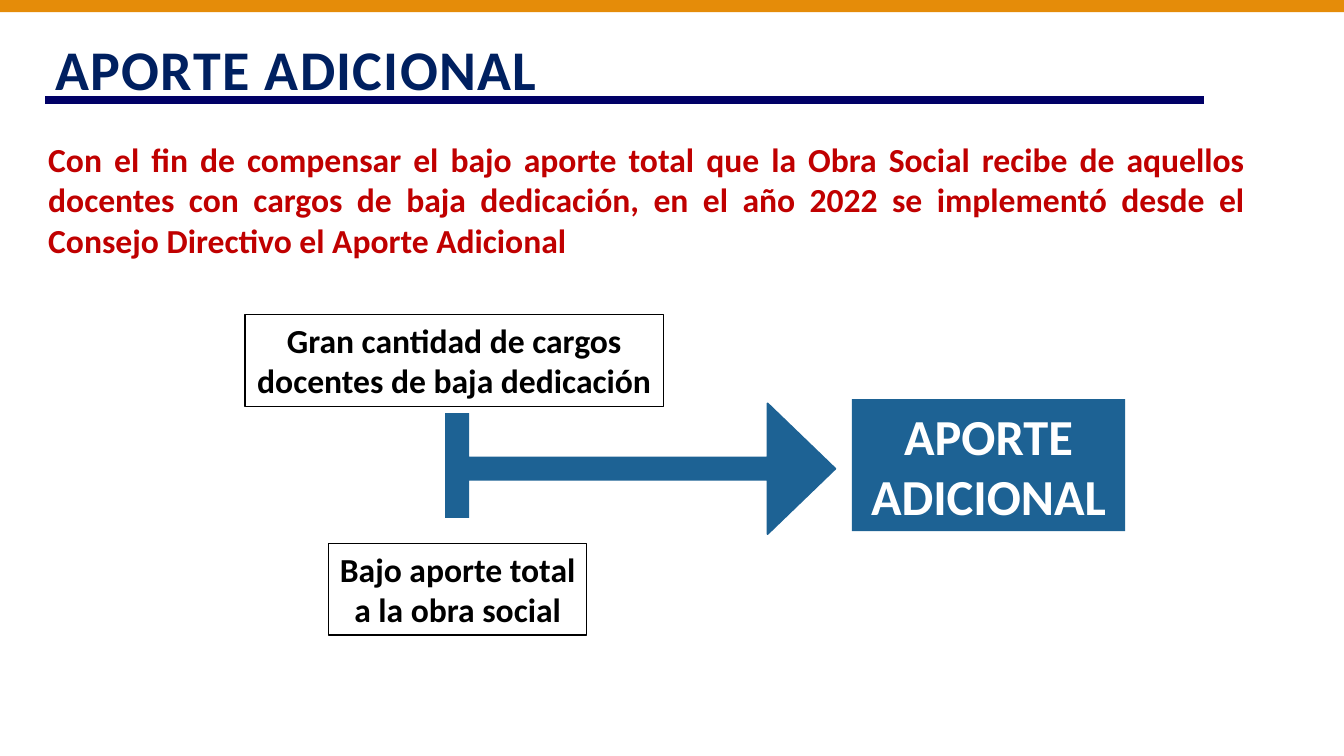
"""Build the slide that explains the additional contribution."""
from pptx import Presentation
from pptx.dml.color import RGBColor
from pptx.enum.shapes import MSO_CONNECTOR, MSO_SHAPE
from pptx.enum.text import MSO_ANCHOR, PP_ALIGN
from pptx.oxml.ns import qn
from pptx.util import Inches, Pt
from lxml.etree import SubElement

FONT = "Calibri"
ORANGE, NAVY, RULE_BLUE = "E58C09", "002060", "000066"
BLUE, RED, BLACK, WHITE = "1D6294", "C00000", "000000", "FFFFFF"

TITLE = "APORTE ADICIONAL"
PURPOSE = (
    "Con el fin de compensar el bajo aporte total que la Obra Social recibe "
    "de aquellos docentes con cargos de baja dedicación, en el año 2022 se "
    "implementó desde el Consejo Directivo el Aporte Adicional"
)
ARROW_BOX = (4.74, 2.45, 2.69, 4.4)
ARROW_PROPORTIONS = (0.082, 0.241, 0.25)
ARROW_COVERS = [(3.65, 3.14, 1.96, 0.95), (3.45, 5.15, 1.96, 0.95)]
RESULT = (["APORTE", "ADICIONAL"], (8.45, 3.96, 2.71, 1.31))
CAUSES = [
    (["Gran cantidad de cargos", "docentes de baja dedicación"], (2.43, 3.12, 4.15, 0.91)),
    (["Bajo aporte total", "a la obra social"], (3.26, 5.39, 2.56, 0.91)),
]


def rgb(color):
    return RGBColor.from_string(color)


def write(frame, lines, size, color, align):
    for number, line in enumerate(lines):
        paragraph = frame.paragraphs[0] if number == 0 else frame.add_paragraph()
        paragraph.alignment = align
        run = paragraph.add_run()
        run.text = line
        run.font.name = FONT
        run.font.size = Pt(size)
        run.font.bold = True
        run.font.color.rgb = rgb(color)


def add_box(slide, box, fill=None, line=None, width=1.25, preset=MSO_SHAPE.RECTANGLE):
    shape = slide.shapes.add_shape(preset, *map(Inches, box))
    shape.shadow.inherit = False
    if fill:
        shape.fill.solid()
        shape.fill.fore_color.rgb = rgb(fill)
    else:
        shape.fill.background()
    if line:
        shape.line.color.rgb = rgb(line)
        shape.line.width = Pt(width)
    else:
        shape.line.fill.background()
    return shape


def add_label(shape, lines, size, color):
    shape.text_frame.word_wrap = False
    shape.text_frame.vertical_anchor = MSO_ANCHOR.MIDDLE
    write(shape.text_frame, lines, size, color, PP_ALIGN.CENTER)


def add_title(slide):
    title = slide.shapes.title
    title.left, title.top, title.width, title.height = map(Inches, (0.45, 0.29, 12.67, 0.77))
    title.text_frame.vertical_anchor = MSO_ANCHOR.MIDDLE
    write(title.text_frame, [TITLE], 40, NAVY, PP_ALIGN.LEFT)
    title.text_frame.paragraphs[0].runs[0].font._element.set("spc", "100")
    rule = slide.shapes.add_connector(
        MSO_CONNECTOR.STRAIGHT, Inches(0.45), Inches(0.99), Inches(11.94), Inches(0.99))
    rule.line.color.rgb = rgb(RULE_BLUE)
    rule.line.width = Pt(6)
    SubElement(rule._element.spPr, qn("a:effectLst"))


def add_arrow(slide):
    arrow = add_box(slide, ARROW_BOX, BLUE, BLUE, preset=MSO_SHAPE.LEFT_RIGHT_UP_ARROW)
    arrow.rotation = 90
    for index, proportion in enumerate(ARROW_PROPORTIONS):
        arrow.adjustments[index] = proportion
    for cover in ARROW_COVERS:
        add_box(slide, cover, WHITE, WHITE)


def main():
    deck = Presentation()
    deck.slide_width, deck.slide_height = Inches(13.33), Inches(7.5)
    slide = deck.slides.add_slide(deck.slide_layouts[5])
    add_box(slide, (0, 0, 13.33, 0.12), ORANGE)
    add_title(slide)
    add_arrow(slide)
    lines, box = RESULT
    add_label(add_box(slide, box, BLUE), lines, 36, WHITE)
    for lines, box in CAUSES:
        add_label(add_box(slide, box, line=BLACK, width=0.75), lines, 24, BLACK)
    purpose = slide.shapes.add_textbox(*map(Inches, (0.38, 1.33, 12.07, 1.31)))
    purpose.text_frame.word_wrap = True
    write(purpose.text_frame, [PURPOSE], 24, RED, PP_ALIGN.JUSTIFY)
    deck.save("out.pptx")


if __name__ == "__main__":
    main()
